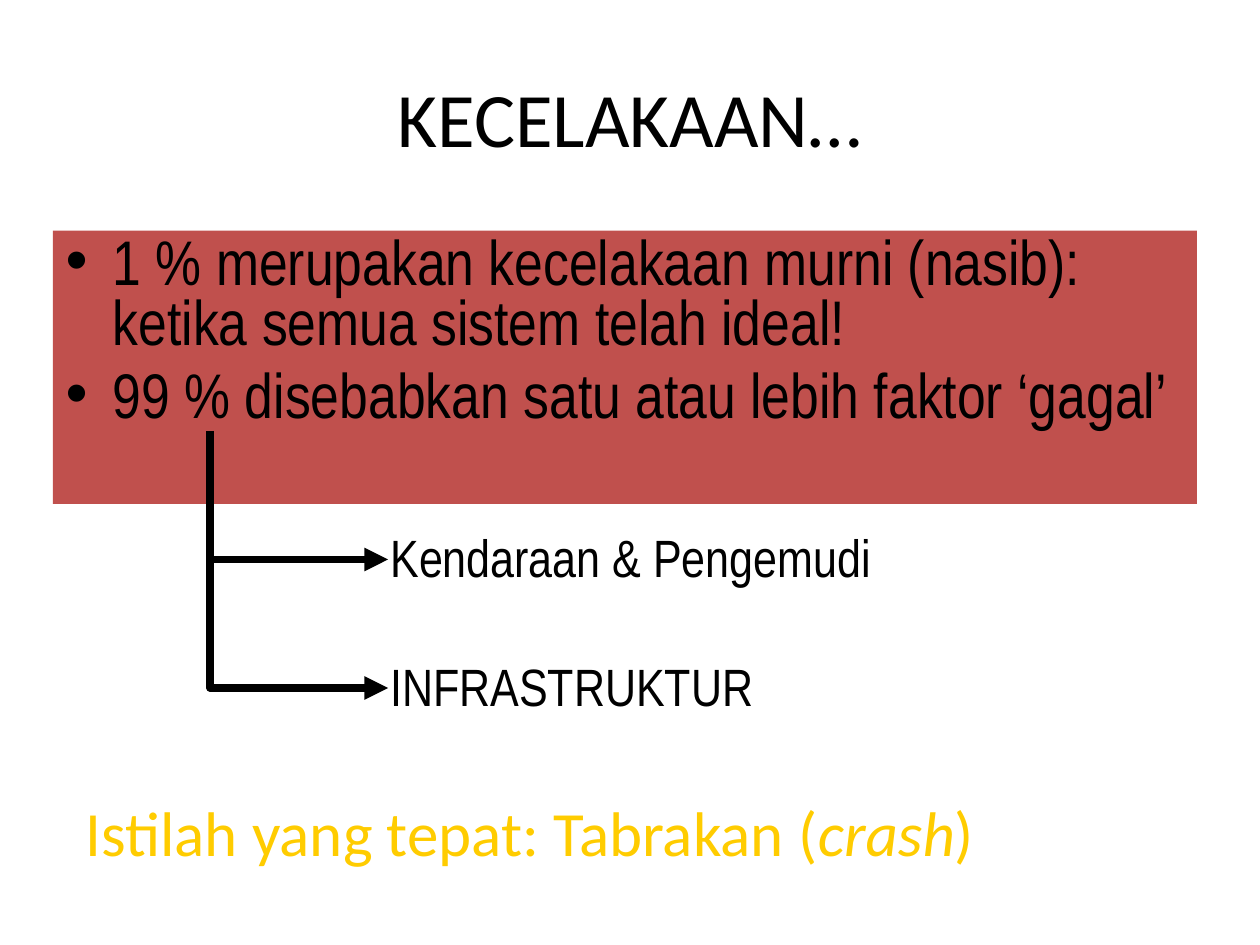
from dataclasses import dataclass

from lxml.etree import SubElement
from pptx import Presentation
from pptx.dml.color import RGBColor
from pptx.enum.text import MSO_ANCHOR, MSO_AUTO_SIZE, PP_ALIGN
from pptx.oxml.ns import qn
from pptx.util import Inches, Pt

COLORS = {"text": "000000", "panel": "C0504D", "accent": "FFCC00"}
NARROW = "Arial Narrow"
TITLE_FONT = "Calibri"

BULLETS = [
    "1 % merupakan kecelakaan murni (nasib): ketika semua sistem telah ideal!",
    "99 % disebabkan satu atau lebih faktor ‘gagal’",
]
STEM_LEFT, STEM_TOP, ARROW_END = 1.67, 3.42, 3.08
BRANCH_HEIGHT = 1.02


@dataclass
class Branch:
    label: str
    width: float


BRANCHES = [Branch("Kendaraan & Pengemudi", 4.17), Branch("INFRASTRUKTUR", 4.06)]


def place(shape, left: float, top: float, width: float, height: float) -> None:
    shape.left, shape.top = Inches(left), Inches(top)
    shape.width, shape.height = Inches(width), Inches(height)


def add_text(paragraph, text: str, *, size: float, font: str = NARROW,
             color: str = "text", italic: bool = False) -> None:
    run = paragraph.add_run()
    run.text = text
    run.font.size = Pt(size)
    run.font.name = font
    run.font.italic = italic
    run.font.color.rgb = RGBColor.from_string(COLORS[color])


def add_text_box(slide, left: float, top: float, width: float, height: float):
    """Add a wrapping text box and return its first paragraph."""
    box = slide.shapes.add_textbox(*map(Inches, (left, top, width, height)))
    box.text_frame.word_wrap = True
    box.text_frame.auto_size = MSO_AUTO_SIZE.SHAPE_TO_FIT_TEXT
    return box.text_frame.paragraphs[0]


def add_elbow_arrow(slide, top: float) -> None:
    """Draw a line down from top, then right to an arrowhead."""
    bottom = top + BRANCH_HEIGHT
    builder = slide.shapes.build_freeform(Inches(STEM_LEFT), Inches(top))
    builder.add_line_segments(
        [(Inches(STEM_LEFT), Inches(bottom)), (Inches(ARROW_END), Inches(bottom))],
        close=False)
    arrow = builder.convert_to_shape()
    arrow.shadow.inherit = False
    arrow.fill.background()
    arrow.line.color.rgb = RGBColor.from_string(COLORS["text"])
    arrow.line.width = Pt(4.5)
    line = arrow.line._get_or_add_ln()
    SubElement(line, qn("a:round"))
    SubElement(line, qn("a:tailEnd"), type="triangle")


def fill_title(title) -> None:
    place(title, 0.5, 0.3, 9, 1.25)
    title.text_frame.vertical_anchor = MSO_ANCHOR.MIDDLE
    paragraph = title.text_frame.paragraphs[0]
    paragraph.alignment = PP_ALIGN.CENTER
    add_text(paragraph, "KECELAKAAN…", size=44, font=TITLE_FONT)


def fill_body(body) -> None:
    place(body, 0.42, 1.83, 9.08, 2.17)
    body.fill.solid()
    body.fill.fore_color.rgb = RGBColor.from_string(COLORS["panel"])
    frame = body.text_frame
    frame.auto_size = MSO_AUTO_SIZE.NONE
    for index, text in enumerate(BULLETS):
        paragraph = frame.add_paragraph() if index else frame.paragraphs[0]
        paragraph.line_spacing = 0.8
        paragraph.space_before = Pt(7.2 if index else 0)
        add_text(paragraph, text, size=36)


def main() -> None:
    presentation = Presentation()
    presentation.slide_width, presentation.slide_height = Inches(10), Inches(7.5)
    slide = presentation.slides.add_slide(presentation.slide_layouts[1])
    fill_title(slide.shapes.title)
    fill_body(slide.placeholders[1])

    for index, branch in enumerate(BRANCHES):
        top = STEM_TOP + index * BRANCH_HEIGHT
        add_elbow_arrow(slide, top)
        label = add_text_box(slide, 3, top + 0.7, branch.width, 0.6)
        add_text(label, branch.label, size=30)

    closing = add_text_box(slide, 0.58, 6.25, 8.75, 0.7)
    for text, italic in (("Istilah yang tepat: Tabrakan (", False),
                         ("crash", True), (")", False)):
        add_text(closing, text, size=36, font=TITLE_FONT, color="accent", italic=italic)

    presentation.save("out.pptx")


if __name__ == "__main__":
    main()
